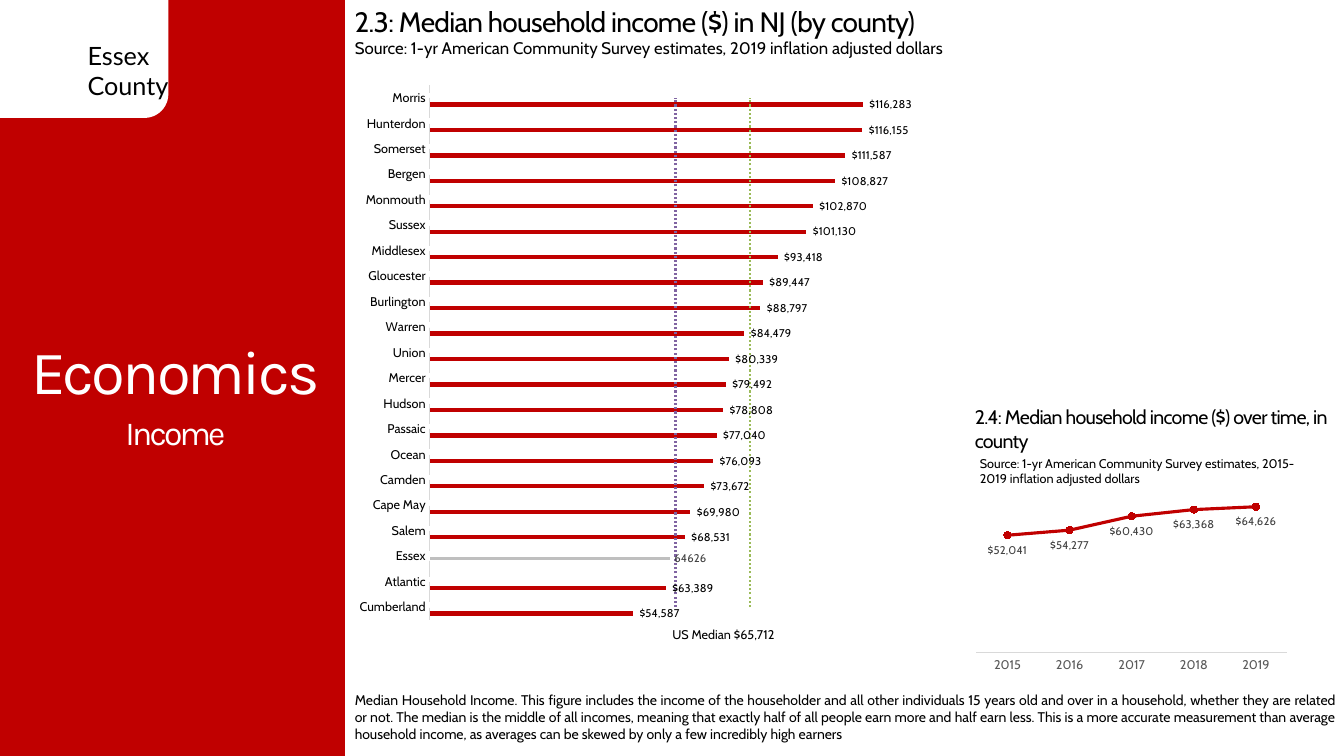
import pptx
import pptx.util
import pptx.oxml
import pptx.oxml.ns
import pptx.chart.data
import pptx.dml.color
import pptx.enum.chart
import pptx.enum.dml
import pptx.enum.shapes
import pptx.enum.text

PX = 9144
RGB = pptx.dml.color.RGBColor
RED = RGB(0xC0, 0x00, 0x00)
WHITE = RGB(0xFF, 0xFF, 0xFF)
BLACK = RGB(0x00, 0x00, 0x00)
DARK = RGB(0x40, 0x40, 0x40)
GREY = RGB(0x59, 0x59, 0x59)
PALE = RGB(0xBF, 0xBF, 0xBF)
RULE = RGB(0xD9, 0xD9, 0xD9)
GREEN = RGB(0x9B, 0xBB, 0x59)
PURPLE = RGB(0x80, 0x64, 0xA2)

FONT = "Cabin"
CASH = '_("$"* #,##0_)'
ALIGN = pptx.enum.text.PP_ALIGN
ANCHOR = pptx.enum.text.MSO_ANCHOR
KIND = pptx.enum.chart.XL_CHART_TYPE
SPOT = pptx.enum.chart.XL_LABEL_POSITION
FORM = pptx.enum.shapes.MSO_SHAPE

MEDIANS = {
    "Cumberland": 54587, "Atlantic": 63389, "Essex": 64626, "Salem": 68531,
    "Cape May": 69980, "Camden": 73672, "Ocean": 76093, "Passaic": 77040,
    "Hudson": 78808, "Mercer": 79492, "Union": 80339, "Warren": 84479,
    "Burlington": 88797, "Gloucester": 89447, "Middlesex": 93418,
    "Sussex": 101130, "Monmouth": 102870, "Bergen": 108827,
    "Somerset": 111587, "Hunterdon": 116155, "Morris": 116283,
}
YEARS = {"2015": 52041, "2016": 54277, "2017": 60430, "2018": 63368, "2019": 64626}
NOTE = (
    "Median Household Income. This figure includes the income of the householder and all "
    "other individuals 15 years old and over in a household, whether they are related or not. "
    "The median is the middle of all incomes, meaning that exactly half of all people earn "
    "more and half earn less. This is a more accurate measurement than average household "
    "income, as averages can be skewed by only a few incredibly high earners"
)


def scale(*box):
    return [n * PX for n in box]


def write(slide, text, box, size=12, font=FONT, color=BLACK, align=ALIGN.LEFT,
          anchor=ANCHOR.TOP, space=0, lead=None, holder=None):
    shape = holder or slide.shapes.add_textbox(*scale(*box))
    shape.left, shape.top, shape.width, shape.height = scale(*box)
    frame = shape.text_frame
    frame.text = text
    frame.word_wrap = True
    frame.auto_size = pptx.enum.text.MSO_AUTO_SIZE.NONE
    frame.vertical_anchor = anchor
    for para in frame.paragraphs:
        para.alignment = align
        para.space_before = pptx.util.Pt(0)
        if lead:
            para.line_spacing = lead
        for run in para.runs:
            style(run.font, size, color, font)
            if space:
                run.font._element.set("spc", str(space))
    return shape


def style(face, size, color, font=FONT):
    face.name = font
    face.size = pptx.util.Pt(size)
    face.color.rgb = color


def block(slide, form, box, color):
    shape = slide.shapes.add_shape(form, *scale(*box))
    shape.shadow.inherit = False
    shape.fill.solid()
    shape.fill.fore_color.rgb = color
    shape.line.fill.background()


def plot(slide, kind, box, cats, rows, top, inner, ink):
    data = pptx.chart.data.CategoryChartData()
    data.categories = cats
    for name, vals in rows:
        data.add_series(name, vals)
    chart = slide.shapes.add_chart(kind, *scale(*box), data).chart
    chart.has_legend = False
    chart.has_title = False
    style(chart.font, 10, BLACK)
    chart.plots[0].vary_by_categories = False
    worth = chart.value_axis
    worth.minimum_scale, worth.maximum_scale = 0, top
    worth.has_major_gridlines = False
    worth.visible = False
    axis = chart.category_axis
    axis.major_tick_mark = pptx.enum.chart.XL_TICK_MARK.NONE
    axis.format.line.color.rgb = RULE
    axis.format.line.width = pptx.util.Pt(0.75)
    style(axis.tick_labels.font, 9, ink)
    area = chart._chartSpace.chart.plotArea
    for old in area.findall(pptx.oxml.ns.qn("c:layout")):
        area.remove(old)
    parts = "".join(f'<c:{tag} val="{val}"/>' for tag, val in zip("xywh", inner))
    area.insert(0, pptx.oxml.parse_xml(
        f'<c:layout {pptx.oxml.ns.nsdecls("c")}><c:manualLayout>'
        '<c:layoutTarget val="inner"/><c:xMode val="edge"/><c:yMode val="edge"/>'
        f'{parts}</c:manualLayout></c:layout>'))
    return chart


def label(row, color, spot, code):
    tags = row.data_labels
    tags.show_value = True
    tags.position = spot
    tags.number_format = code
    tags.number_format_is_linked = False
    style(tags.font, 8, color)


def trend(row, color):
    line = pptx.oxml.parse_xml(
        f'<c:trendline {pptx.oxml.ns.nsdecls("c", "a")}><c:spPr><a:ln w="19050">'
        f'<a:solidFill><a:srgbClr val="{color}"/></a:solidFill>'
        '<a:prstDash val="sysDot"/></a:ln></c:spPr><c:trendlineType val="linear"/>'
        '<c:dispRSqr val="0"/><c:dispEq val="0"/></c:trendline>')
    row._element.find(pptx.oxml.ns.qn("c:cat")).addprevious(line)


def side(slide, box):
    x, y, w, h = box
    block(slide, FORM.RECTANGLE, box, RED)
    block(slide, FORM.ROUNDED_RECTANGLE, (x - 33, y - 25, 200, 142), WHITE)
    write(slide, "Essex\nCounty", (x + 77, y + 35, 120, 71), size=18, font="Lato")
    heads = [("Economics", 322, 44), ("Income", 381, 24)]
    for holder, (text, top, size) in zip(list(slide.placeholders), heads):
        write(slide, text, (x + 3, y + top, w, 100), size=size, font="Karla",
              color=WHITE, align=ALIGN.CENTER, anchor=ANCHOR.MIDDLE, space=-200,
              lead=0.9, holder=holder)
        slide.shapes.element.append(holder.element)


def bars(slide, box):
    x, y, w, h = box
    write(slide, "2.3: Median household income ($) in NJ (by county)",
          (x, y, 986, 44), size=20, space=-50)
    write(slide, "Source: 1-yr American Community Survey estimates, 2019 inflation adjusted dollars",
          (x, y + 33, 919, 30))
    rows = [
        ("Series 1", [None if k == "Essex" else v for k, v in MEDIANS.items()]),
        ("County", [v if k == "Essex" else None for k, v in MEDIANS.items()]),
        ("Series 3", [86000] * len(MEDIANS)),
        ("Series 4", [66000] * len(MEDIANS)),
    ]
    chart = plot(slide, KIND.BAR_CLUSTERED, (x + 4, y + 67, w - 4, h - 67),
                 list(MEDIANS), rows, 140000, (0.13, 0.03, 0.84, 0.91), BLACK)
    chart.plots[0].gap_width = 182
    chart.plots[0].overlap = 0
    main, county, high, low = chart.plots[0].series
    for row, color in [(main, RED), (county, PALE), (high, WHITE), (low, WHITE)]:
        row.invert_if_negative = False
        row.format.fill.solid()
        row.format.fill.fore_color.rgb = color
    for row in (county, high):
        row.format.line.color.rgb = WHITE
        row.format.line.width = pptx.util.Pt(0.75)
    label(main, BLACK, SPOT.OUTSIDE_END, CASH)
    label(county, DARK, SPOT.OUTSIDE_END, "General")
    trend(high, GREEN)
    trend(low, PURPLE)
    write(slide, "US Median $65,712", (x + 315, y + 617, 150, 26), size=9)


def years(slide, box):
    x, y, w, h = box
    write(slide, "2.4: Median household income ($) over time, in county",
          (x, y, w, 57), size=14, space=-50)
    write(slide, "Source: 1-yr American Community Survey estimates, 2015-2019 inflation adjusted dollars",
          (x + 5, y + 50, 338, 40), size=9)
    chart = plot(slide, KIND.LINE_MARKERS, (x + 5, y + 90, 321, h - 90), list(YEARS),
                 [("Series 1", list(YEARS.values()))], 70000, (0.02, 0.02, 0.96, 0.85), GREY)
    row = chart.plots[0].series[0]
    row.smooth = False
    row.format.line.color.rgb = RED
    row.format.line.width = pptx.util.Pt(2.25)
    row.marker.style = pptx.enum.chart.XL_MARKER_STYLE.CIRCLE
    row.marker.size = 5
    row.marker.format.fill.solid()
    row.marker.format.fill.fore_color.rgb = RED
    row.marker.format.line.color.rgb = RED
    label(row, DARK, SPOT.BELOW, CASH)


def main():
    deck = pptx.Presentation()
    deck.slide_width, deck.slide_height = scale(1333, 750)
    slide = deck.slides.add_slide(deck.slide_layouts[0])
    side(slide, (0, 0, 342, 750))
    bars(slide, (342, 0, 620, 650))
    years(slide, (957, 397, 371, 275))
    write(slide, NOTE, (342, 680, 992, 62), size=10, align=ALIGN.JUSTIFY,
          anchor=ANCHOR.MIDDLE)
    deck.save("out.pptx")


if __name__ == "__main__":
    main()
